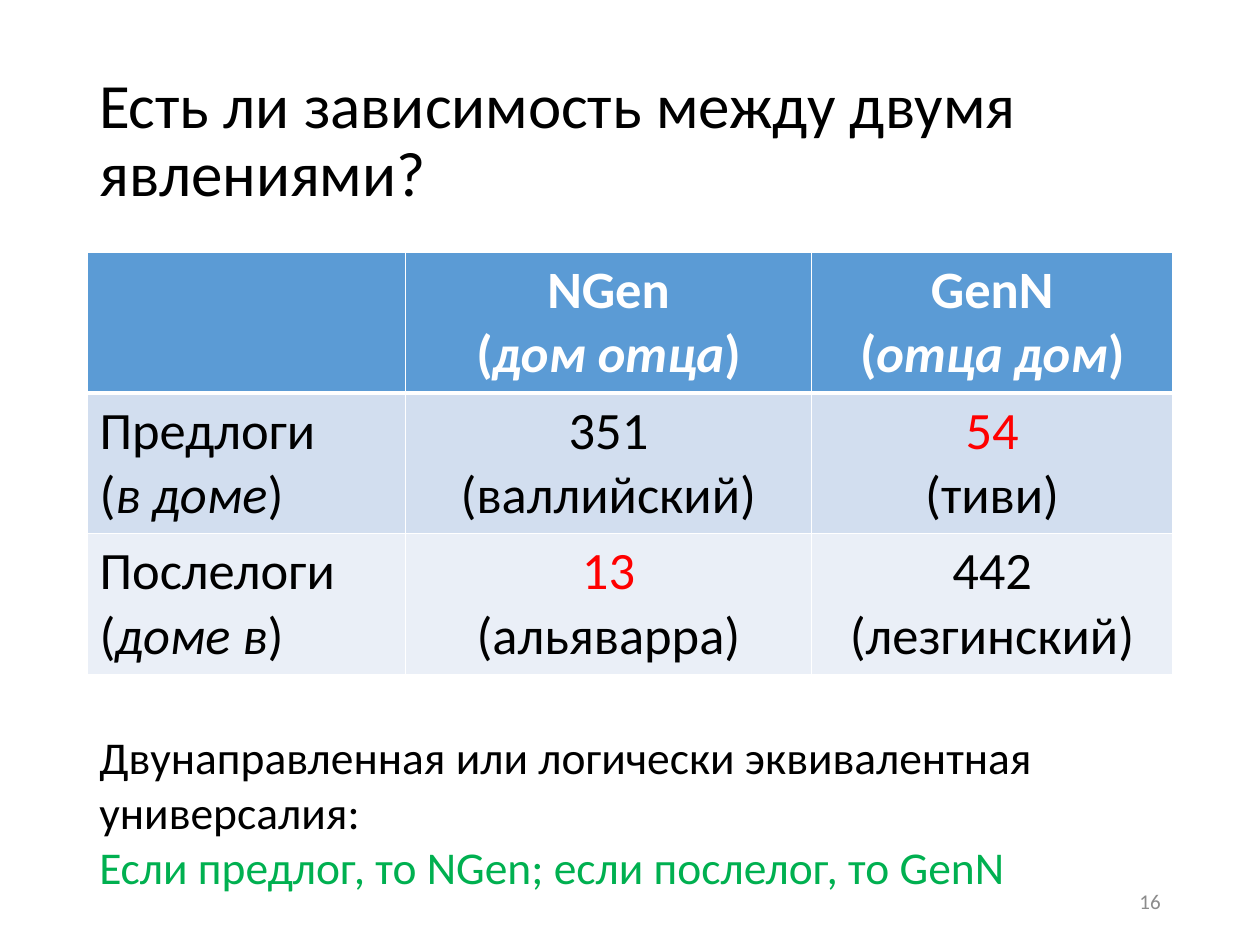
from dataclasses import dataclass

from lxml import etree
from pptx import Presentation
from pptx.dml.color import RGBColor
from pptx.enum import text as t
from pptx.oxml import ns
from pptx.util import Inches, Pt

FONT = "Calibri"
BLACK = RGBColor(0, 0, 0)
WHITE = RGBColor(255, 255, 255)
RED = RGBColor(255, 0, 0)
GREEN = RGBColor(0, 0xB0, 0x50)
GREY = RGBColor(0x8C, 0x8C, 0x8C)
BLUE = RGBColor(0x5B, 0x9B, 0xD5)
PALE = RGBColor(0xD2, 0xDE, 0xEF)
LIGHT = RGBColor(0xEA, 0xEF, 0xF7)

LEFT, WIDTH = 0.69, 8.62
COLS = (2.53, 3.22, 2.87)
ROW = 1.1


@dataclass
class Entry:
    head: str = ""
    sub: str = ""  # asterisks enclose italics
    color: RGBColor = BLACK


@dataclass
class Band:
    fill: RGBColor
    cells: tuple[Entry, ...]
    ink: RGBColor = BLACK
    bold: bool = False
    base: float = 1  # width of the lower border


BANDS = (
    Band(BLUE, (Entry(),
                Entry("NGen", "(*дом отца*)", WHITE),
                Entry("GenN", "(*отца дом*)", WHITE)),
         ink=WHITE, bold=True, base=3),
    Band(PALE, (Entry("Предлоги", "(*в доме*)"),
                Entry("351", "(валлийский)"),
                Entry("54", "(тиви)", RED))),
    Band(LIGHT, (Entry("Послелоги", "(*доме в*)"),
                 Entry("13", "(альяварра)", RED),
                 Entry("442", "(лезгинский)"))),
)


def write(para, words: str, size: float, color: RGBColor = BLACK,
          bold: bool = False, align=t.PP_ALIGN.LEFT) -> None:
    """Fill a paragraph; parts between asterisks are italic."""
    para.alignment = align
    for i, part in enumerate(words.split("*")):
        if part:
            run = para.add_run()
            run.text = part
            font = run.font
            font.name, font.size, font.bold = FONT, Pt(size), bold
            font.italic = i % 2 == 1
            font.color.rgb = color


def edge(cell, base: float, top: float) -> None:
    """Give a cell white borders."""
    props = cell._tc.get_or_add_tcPr()
    sides = {"lnL": 1, "lnR": 1, "lnT": top, "lnB": base}
    for i, (side, width) in enumerate(sides.items()):
        line = etree.Element(ns.qn(f"a:{side}"), w=str(Pt(width)))
        fill = etree.SubElement(line, ns.qn("a:solidFill"))
        etree.SubElement(fill, ns.qn("a:srgbClr"), val=str(WHITE))
        props.insert(i, line)


def add_grid(slide) -> None:
    grid = slide.shapes.add_table(
        len(BANDS), len(COLS), Inches(LEFT), Inches(2),
        Inches(WIDTH), Inches(ROW * len(BANDS))).table
    for col, width in zip(grid.columns, COLS):
        col.width = Inches(width)
    top = 1
    for row, band in zip(grid.rows, BANDS):
        row.height = Inches(ROW)
        for i, (cell, entry) in enumerate(zip(row.cells, band.cells)):
            cell.fill.solid()
            cell.fill.fore_color.rgb = band.fill
            edge(cell, band.base, top)
            if entry.head:
                align = t.PP_ALIGN.CENTER if i else t.PP_ALIGN.LEFT
                frame = cell.text_frame
                write(frame.paragraphs[0], entry.head, 30, entry.color,
                      band.bold, align)
                write(frame.add_paragraph(), entry.sub, 30, band.ink,
                      band.bold, align)
        top = band.base


def add_box(slide, left: float, top: float, width: float, height: float):
    frame = slide.shapes.add_textbox(
        Inches(left), Inches(top), Inches(width), Inches(height)).text_frame
    frame.word_wrap = True
    return frame


def main() -> None:
    deck = Presentation()
    deck.slide_width, deck.slide_height = Inches(10), Inches(7.5)
    slide = deck.slides.add_slide(deck.slide_layouts[5])

    # Title
    title = slide.shapes.title
    title.left, title.top = Inches(LEFT), Inches(0.4)
    title.width, title.height = Inches(WIDTH), Inches(1.45)
    title.text_frame.vertical_anchor = t.MSO_ANCHOR.MIDDLE
    para = title.text_frame.paragraphs[0]
    para.line_spacing = 0.9
    write(para, "Есть ли зависимость между двумя явлениями?", 36)

    # Counts of languages
    add_grid(slide)

    # Conclusion
    note = add_box(slide, LEFT, 5.74, WIDTH, 1.41)
    write(note.paragraphs[0],
          "Двунаправленная или логически эквивалентная универсалия:", 26)
    write(note.add_paragraph(),
          "Если предлог, то NGen; если послелог, то GenN", 26, GREEN)

    # Page number
    page = add_box(slide, 7.06, 6.95, 2.25, 0.4)
    page.vertical_anchor = t.MSO_ANCHOR.MIDDLE
    write(page.paragraphs[0], "16", 12, GREY, align=t.PP_ALIGN.RIGHT)

    deck.save("out.pptx")


if __name__ == "__main__":
    main()
